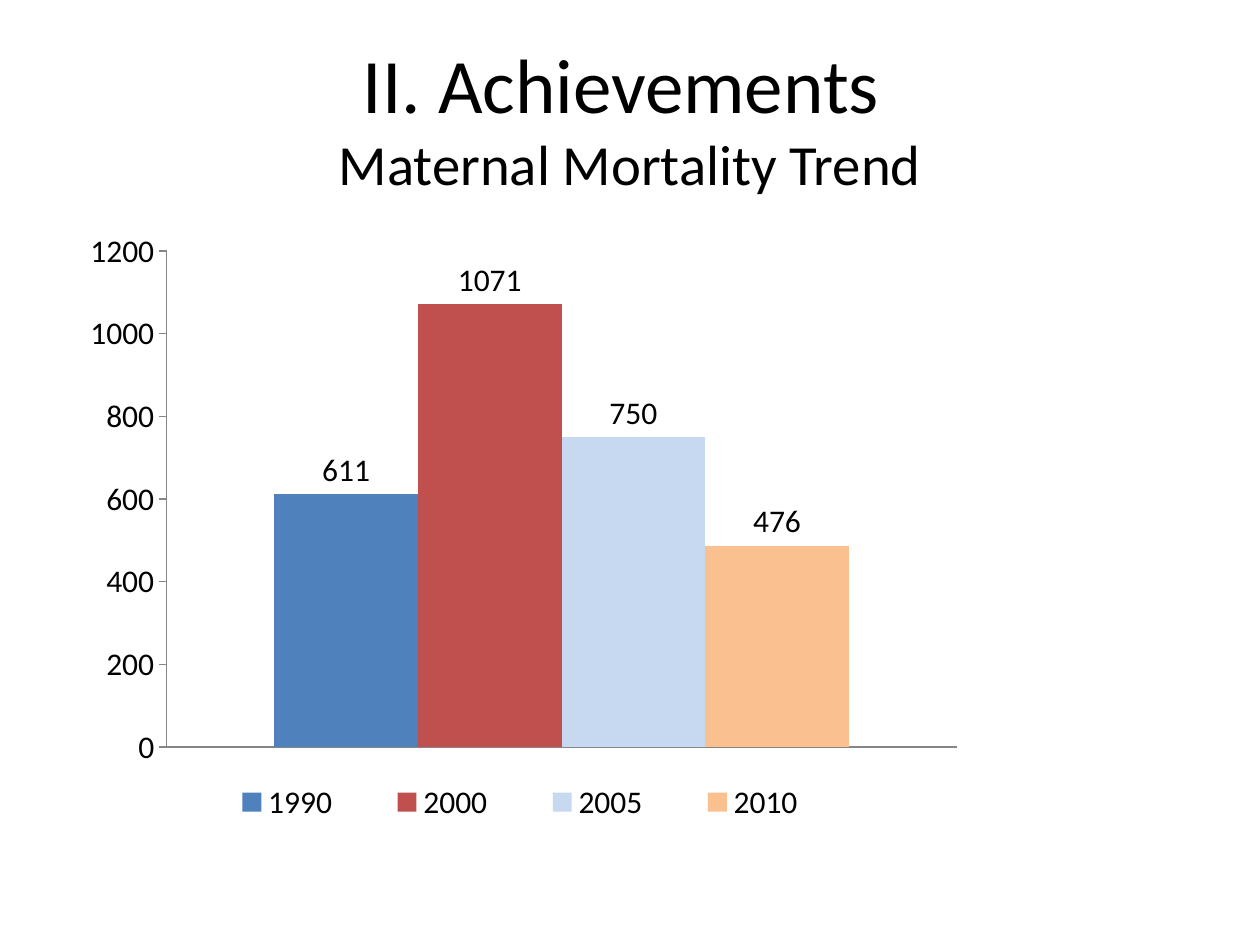
from lxml import etree
from pptx import Presentation
from pptx.chart.data import CategoryChartData
from pptx.dml.color import RGBColor
from pptx.enum.chart import (XL_CHART_TYPE, XL_LABEL_POSITION, XL_LEGEND_POSITION,
                             XL_TICK_LABEL_POSITION, XL_TICK_MARK)
from pptx.enum.text import MSO_ANCHOR, PP_ALIGN
from pptx.oxml.ns import qn
from pptx.util import Inches, Pt

COLUMN = XL_CHART_TYPE.COLUMN_CLUSTERED
ABOVE = XL_LABEL_POSITION.OUTSIDE_END
BOTTOM = XL_LEGEND_POSITION.BOTTOM
NO_LABEL = XL_TICK_LABEL_POSITION.NONE
NO_TICK, OUT_TICK = XL_TICK_MARK.NONE, XL_TICK_MARK.OUTSIDE
MIDDLE, CENTER = MSO_ANCHOR.MIDDLE, PP_ALIGN.CENTER

BLACK = RGBColor(0, 0, 0)
GRAY = RGBColor(0x86, 0x86, 0x86)
BLUE = RGBColor(0x4F, 0x81, 0xBD)
RED = RGBColor(0xC0, 0x50, 0x4D)
PALE = RGBColor(0xC6, 0xD9, 0xF1)
PEACH = RGBColor(0xFA, 0xC0, 0x90)
FONT = "Calibri"

TITLE = [("II. Achievements ", 44), ("Maternal Mortality Trend", 32.4)]
TITLE_BOX = (0.5, 0.3, 9, 1.25)
CHART_BOX = (0.58, 1.75, 8.25, 4.86)
PLOT_AREA = (0.09, 0.05, 0.76, 0.81)
LEGEND_AREA = (0.11, 0.91, 0.64, 0.08)
YEARS = [
    ("1990", 611, "611", BLUE),
    ("2000", 1071, "1071", RED),
    ("2005", 750, "750", PALE),
    ("2010", 487, "476", PEACH),
]


def style(font, size):
    font.name = FONT
    font.size = Pt(size)
    font.color.rgb = BLACK


def lay_out(parent, index, area, inner=False):
    for old in parent.findall(qn("c:layout")):
        parent.remove(old)
    layout = etree.Element(qn("c:layout"))
    parent.insert(index, layout)
    manual = etree.SubElement(layout, qn("c:manualLayout"))
    rules = [("layoutTarget", "inner")] if inner else []
    rules += [("xMode", "edge"), ("yMode", "edge")]
    rules += zip("xywh", area)
    for tag, value in rules:
        etree.SubElement(manual, qn("c:" + tag)).set("val", str(value))


def add_title(slide):
    frame = slide.shapes.add_textbox(*map(Inches, TITLE_BOX)).text_frame
    frame.word_wrap = True
    frame.vertical_anchor = MIDDLE
    para = frame.paragraphs[0]
    para.alignment = CENTER
    for i, (text, size) in enumerate(TITLE):
        if i:
            para.add_line_break()
        run = para.add_run()
        run.text = text
        style(run.font, size)


def add_trend(slide):
    data = CategoryChartData()
    data.categories = ["1"]
    for year, value, label, color in YEARS:
        data.add_series(year, [value])
    chart = slide.shapes.add_chart(COLUMN, *map(Inches, CHART_BOX), data).chart
    style(chart.font, 18)
    chart.has_title = False

    plot = chart.plots[0]
    plot.gap_width = 150
    plot.overlap = 0
    plot.vary_by_categories = False
    for series, (year, value, label, color) in zip(plot.series, YEARS):
        series.format.fill.solid()
        series.format.fill.fore_color.rgb = color
        labels = series.data_labels
        labels.show_value = True
        labels.position = ABOVE
        style(labels.font, 18)
        if label != str(value):
            custom = series.points[0].data_label
            custom.text_frame.text = label
            style(custom.text_frame.paragraphs[0].font, 18)
            custom.position = ABOVE

    base, scale = chart.category_axis, chart.value_axis
    base.tick_label_position = NO_LABEL
    base.major_tick_mark = NO_TICK
    scale.major_tick_mark = OUT_TICK
    scale.has_major_gridlines = False
    scale.minimum_scale, scale.maximum_scale = 0, 1200
    scale.major_unit = 200
    for axis in (base, scale):
        axis.format.line.color.rgb = GRAY
        axis.format.line.width = Pt(0.75)

    chart.has_legend = True
    chart.legend.position = BOTTOM
    chart.legend.include_in_layout = False
    style(chart.legend.font, 18)
    lay_out(chart.element.find(".//" + qn("c:plotArea")), 0, PLOT_AREA, True)
    lay_out(chart.element.find(".//" + qn("c:legend")), 1, LEGEND_AREA)


def main():
    deck = Presentation()
    deck.slide_width, deck.slide_height = Inches(10), Inches(7.5)
    slide = deck.slides.add_slide(deck.slide_layouts[6])
    add_title(slide)
    add_trend(slide)
    deck.save("out.pptx")


if __name__ == "__main__":
    main()
